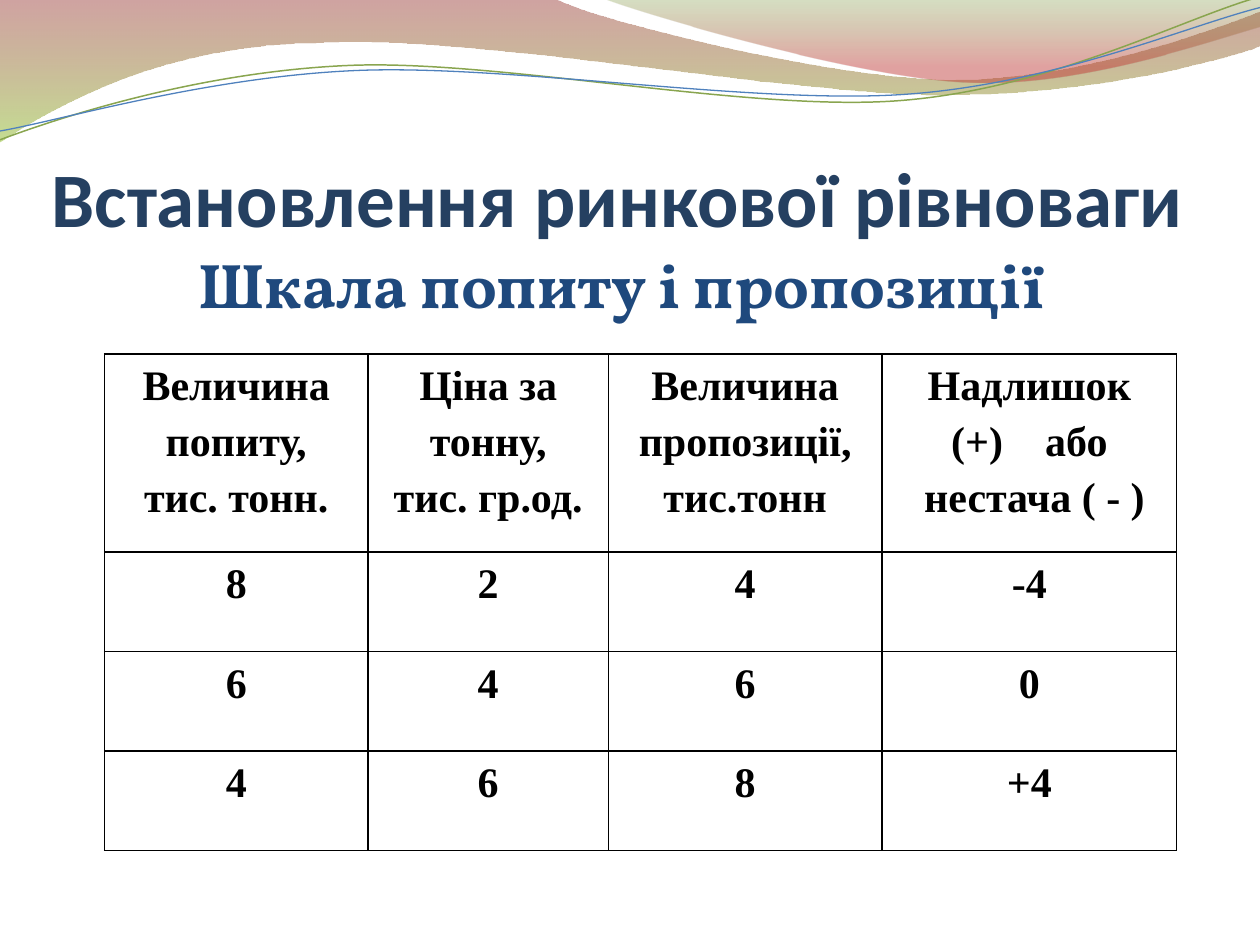
"""Build a slide with a supply and demand table under a wave header."""
from lxml.etree import SubElement as Sub
from pptx import Presentation
from pptx.dml.color import RGBColor as Rgb
from pptx.enum.text import MSO_ANCHOR as Anchor, MSO_AUTO_SIZE as Auto, PP_ALIGN as Align
from pptx.oxml.ns import qn
from pptx.util import Inches, Pt

HUES = {
    "title": "254061", "body": "1F497D", "ink": "000000",
    "rust": "973330", "lime": "95C238", "moss": "769537", "red": "BE3330",
    "green": "89A54F", "blue": "4F81BD",
}
BANDS = [
    ([(0, -0.01), (4.4, -0.01), (4.76, 0.17, 6.64, 0.63, 7.58, 0.63),
      (8.53, 0.63, 9.58, 0.26, 10, 0.09), (10.01, 0.36),
      (9.83, 0.44, 8.7, 0.76, 7.46, 0.75), (6.22, 0.75, 3.82, 0.28, 2.57, 0.34),
      (1.29, 0.35, 0.46, 0.83, -0.01, 1.13)],
     [(0, "rust", 45), (1, "lime", 55)]),
    ([(4.79, -0.01), (5.09, 0.11, 6.82, 0.62, 7.69, 0.65),
      (8.56, 0.69, 9.61, 0.32, 10, 0.21), (10, 0)],
     [(0, "moss", 30), (0.8, "red", 45)]),
]
WAVES = [
    ([(0, 1.11), (0.48, 0.93, 1.58, 0.57, 2.77, 0.52),
      (3.95, 0.47, 5.93, 0.89, 7.13, 0.8), (8.33, 0.71, 9.38, 0.15, 9.98, -0.02)],
     "green", 0.85),
    ([(0, 1.04), (0.47, 0.96, 1.64, 0.61, 2.83, 0.56),
      (4.03, 0.51, 5.97, 0.83, 7.17, 0.75), (8.36, 0.67, 9.41, 0.21, 10, 0.06)],
     "blue", 0.75),
]
COLS = [2.09, 1.91, 2.17, 2.34]
ROWS = [1.57, 0.79, 0.79, 0.79]
CELLS = [
    [["Величина попиту,", "тис. тонн."], ["Ціна за тонну,", "тис. гр.од."],
     ["Величина пропозиції, тис.тонн"],
     ["Надлишок| |(+)| |або", " нестача ( - )"]],
    [["8"], ["2"], ["4"], ["-4"]],
    [["6"], ["4"], ["6"], ["0"]],
    [["4"], ["6"], ["8"], ["+4"]],
]


def color(name):
    return Rgb.from_string(HUES[name])


def bend(shape, steps):
    """Turn the lines of a freeform into cubic curves where steps ask for it."""
    lines = list(shape._element.iter(qn("a:lnTo")))
    for line, step in zip(lines, steps[1:]):
        if len(step) == 2:
            continue
        line.tag
        curve = Sub(line.getparent(), qn("a:cubicBezTo"))
        for x, y in zip(step[::2], step[1::2]):
            Sub(curve, qn("a:pt"), x=str(Inches(x) - shape.left),
                y=str(Inches(y) - shape.top))
        line.getparent().replace(line, curve)


def draw(slide, steps, close):
    dots = [(Inches(step[-2]), Inches(step[-1])) for step in steps]
    pen = slide.shapes.build_freeform(*dots[0])
    pen.add_line_segments(dots[1:], close=close)
    shape = pen.convert_to_shape()
    bend(shape, steps)
    shape.shadow.inherit = False
    return shape


def add_band(slide, steps, stops):
    shape = draw(slide, steps, True)
    shape.line.fill.background()
    fill = shape.fill
    fill.gradient()
    fill.gradient_angle = 270
    for stop, (place, name, alpha) in zip(fill.gradient_stops, stops):
        stop.position = place
        stop.color.rgb = color(name)
        hue = stop._gs.find(qn("a:srgbClr"))
        Sub(hue, qn("a:alpha"), val=str(alpha * 1000))


def add_wave(slide, steps, name, width):
    shape = draw(slide, steps, False)
    shape.fill.background()
    shape.line.color.rgb = color(name)
    shape.line.width = Pt(width)


def add_run(para, text, size, face, name):
    run = para.add_run()
    run.text = text
    font = run.font
    font.size, font.name, font.bold = Pt(size), face, True
    font.color.rgb = color(name)
    return run


def set_text(shape, text, box, inset, anchor, style):
    """Move a placeholder, then fill it with one centred line."""
    shape.left, shape.top, shape.width, shape.height = map(Inches, box)
    frame = shape.text_frame
    frame.auto_size, frame.word_wrap = Auto.NONE, True
    frame.vertical_anchor = anchor
    (frame.margin_left, frame.margin_top,
     frame.margin_right, frame.margin_bottom) = map(Inches, inset)
    para = frame.paragraphs[0]
    para.alignment = Align.CENTER
    props = para._p.get_or_add_pPr()
    props.set("marL", "0")
    props.set("indent", "0")
    Sub(props, qn("a:buNone"))
    add_run(para, text, *style)


def add_edges(cell):
    props = cell._tc.get_or_add_tcPr()
    for side in ("lnL", "lnR", "lnT", "lnB"):
        edge = Sub(props, qn("a:" + side), w=str(Pt(1)))
        Sub(Sub(edge, qn("a:solidFill")), qn("a:srgbClr"), val=HUES["ink"])


def fill_cell(cell, lines):
    """Write the lines of a cell, whose runs are parted by bars."""
    add_edges(cell)
    cell.fill.background()
    cell.margin_left = cell.margin_right = Inches(0.05)
    cell.margin_top = cell.margin_bottom = 0
    frame = cell.text_frame
    for i, line in enumerate(lines):
        para = frame.add_paragraph() if i else frame.paragraphs[0]
        para.alignment, para.line_spacing = Align.CENTER, 1.2
        for text in line.split("|"):
            run = add_run(para, text, 24, "Times New Roman", "ink")
            if text == " ":
                run._r.get_or_add_rPr().set("spc", "1800")


def add_grid(slide):
    box = map(Inches, (0.83, 2.81, sum(COLS), sum(ROWS)))
    table = slide.shapes.add_table(len(ROWS), len(COLS), *box).table
    table.first_row = table.horz_banding = False
    for col, width in zip(table.columns, COLS):
        col.width = Inches(width)
    for row, height, texts in zip(table.rows, ROWS, CELLS):
        row.height = Inches(height)
        for cell, lines in zip(row.cells, texts):
            fill_cell(cell, lines)


def main():
    deck = Presentation()
    deck.slide_width, deck.slide_height = Inches(10), Inches(7.5)
    slide = deck.slides.add_slide(deck.slide_layouts[1])
    for band in BANDS:
        add_band(slide, *band)
    for wave in WAVES:
        add_wave(slide, *wave)
    title, body = slide.shapes.title, slide.placeholders[1]
    for shape in (title, body):
        slide.shapes._spTree.append(shape._element)
    set_text(title, "Встановлення ринкової рівноваги", (0.35, 1.23, 9.11, 0.7),
             (0, 0.05, 0, 0), Anchor.BOTTOM, (44, "Calibri", "title"))
    set_text(body, "Шкала попиту і пропозиції", (1.14, 1.78, 7.58, 0.94),
             (0.05, 0, 0.05, 0), Anchor.MIDDLE, (36, "Vollkorn", "body"))
    add_grid(slide)
    deck.save("out.pptx")


if __name__ == "__main__":
    main()
